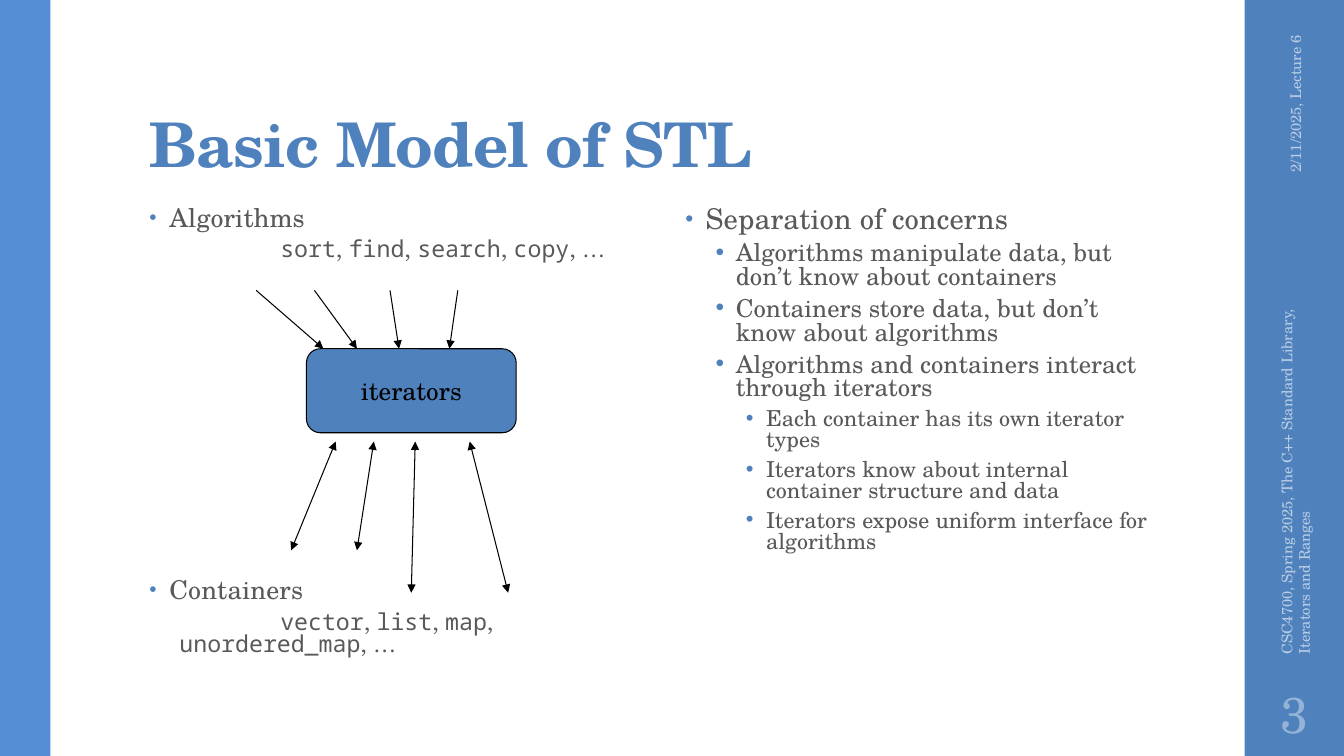
"""Build the slide that explains the basic model of the STL."""
import lxml.etree
import pptx
import pptx.dml.color
import pptx.enum.shapes
import pptx.enum.text
import pptx.oxml.ns
import pptx.util

points = pptx.util.Pt
align = pptx.enum.text.PP_ALIGN
anchor = pptx.enum.text.MSO_ANCHOR
shapes = pptx.enum.shapes.MSO_SHAPE
qualified = pptx.oxml.ns.qn


def colour(value):
    return pptx.dml.color.RGBColor.from_string(value)


def add_element(parent, tag, **attributes):
    return lxml.etree.SubElement(parent, qualified(tag), **attributes)


class SlideBuilder:
    font = "TeX Gyre Schola"
    code_font = "Noto Sans Mono"
    accent = "4F81BD"
    grey = "595959"
    black = "000000"

    def __init__(self, page):
        self.page = page

    def place(self, shape, left, top, width, height):
        shape.left, shape.top = points(left), points(top)
        shape.width, shape.height = points(width), points(height)

    def style(self, span, size, shade, bold=False, spacing=0, font=None):
        span.font.name = font or self.font
        span.font.size = points(size)
        span.font.bold = bold
        span.font.color.rgb = colour(shade)
        if spacing:
            span._r.get_or_add_rPr().set("spc", str(spacing))

    def panel(self, kind, box, fill, line=None):
        shape = self.page.shapes.add_shape(kind, *map(points, box))
        shape.shadow.inherit = False
        shape.fill.solid()
        shape.fill.fore_color.rgb = colour(fill)
        if line:
            shape.line.color.rgb = colour(line)
            shape.line.width = points(0.75)
        else:
            shape.line.fill.background()
        return shape

    def caption(self, shape, text, size, shade, alignment, wrap=True, margin=7.2):
        frame = shape.text_frame
        frame.text = text
        frame.word_wrap = wrap
        frame.vertical_anchor = anchor.MIDDLE
        frame.margin_left = frame.margin_right = points(margin)
        para = frame.paragraphs[0]
        para.alignment = alignment
        self.style(para.runs[0], size, shade)

    def label(self, box, text, size, shade, alignment, rotation=0, margin=7.2):
        shape = self.page.shapes.add_textbox(*map(points, box))
        shape.rotation = rotation
        self.caption(shape, text, size, shade, alignment, margin=margin)

    def title(self, box, text):
        shape = self.page.shapes.title
        self.place(shape, *box)
        frame = shape.text_frame
        frame.text = text
        frame.auto_size = pptx.enum.text.MSO_AUTO_SIZE.NONE
        frame.vertical_anchor = anchor.BOTTOM
        para = frame.paragraphs[0]
        para.alignment = align.LEFT
        para.line_spacing = 0.9
        self.style(para.runs[0], 44, self.accent, bold=True, spacing=-50)

    def listing(self, index, box, sizes, items):
        shape = self.page.placeholders[index]
        self.place(shape, *box)
        frame = shape.text_frame
        frame.auto_size = pptx.enum.text.MSO_AUTO_SIZE.NONE
        for number, (level, text, before) in enumerate(items):
            para = frame.paragraphs[0] if number == 0 else frame.add_paragraph()
            para.level = level
            para.line_spacing = 0.8 if level else 0.85
            para.space_before = points(before)
            para.space_after = points(3 if level else 2)
            for position, part in enumerate(text.split("`")):
                if part:
                    span = para.add_run()
                    span.text = part
                    self.style(span, sizes[level], self.grey,
                               spacing=0 if level else 10,
                               font=self.code_font if position % 2 else None)
            self.indent(para, level, "`" in text)

    def indent(self, para, level, code):
        properties = para._p.get_or_add_pPr()
        left, first = (21.6, 72) if code else (14.4 + 21.6 * level, -14.4)
        properties.set("marL", str(points(left)))
        properties.set("indent", str(points(first)))
        if code:
            add_element(properties, "a:buNone")
            return
        shade = add_element(properties, "a:buClr")
        add_element(shade, "a:srgbClr", val=self.accent)
        add_element(properties, "a:buSzPct", val="100000" if level else "80000")
        add_element(properties, "a:buChar", char="•")

    def arrow(self, start, end, both=False):
        line = self.page.shapes.add_connector(
            pptx.enum.shapes.MSO_CONNECTOR.STRAIGHT, *map(points, start + end))
        line.line.color.rgb = colour(self.black)
        line.line.width = points(0.75)
        stroke = line.line._get_or_add_ln()
        if both:
            add_element(stroke, "a:headEnd", type="triangle")
        add_element(stroke, "a:tailEnd", type="triangle")
        add_element(line._element.spPr, "a:effectLst")


def main():
    deck = pptx.Presentation()
    deck.slide_width, deck.slide_height = points(960), points(540)
    builder = SlideBuilder(deck.slides.add_slide(deck.slide_layouts[3]))

    builder.panel(shapes.RECTANGLE, (889, 0, 72, 540), builder.accent)
    builder.panel(shapes.RECTANGLE, (0, 0, 36, 540), "558ED5")
    builder.title((99.4, 23, 763, 110), "Basic Model of STL")
    builder.listing(1, (99.4, 144, 353, 343), (18.5, 16.6), [
        (0, "Algorithms", 14),
        (1, "`sort`, `find`, `search`, `copy`, …", 3),
        (0, "Containers", 223),
        (1, "`vector`, `list`, `map`, `unordered_map`, …", 3),
    ])
    builder.listing(2, (482.4, 144, 353, 343), (20.4, 17.6, 15.7), [
        (0, "Separation of concerns", 14),
        (1, "Algorithms manipulate data, but don’t know about containers", 3),
        (1, "Containers store data, but don’t know about algorithms", 3),
        (1, "Algorithms and containers interact through iterators", 3),
        (2, "Each container has its own iterator types", 3),
        (2, "Iterators know about internal container structure and data", 3),
        (2, "Iterators expose uniform interface for algorithms", 3),
    ])

    builder.label((850.3, 78.5, 149.8, 28.8), "2/11/2025, Lecture 6",
                  10.5, "B9CDE5", align.RIGHT, rotation=270)
    builder.label((784.1, 319, 282.2, 28.8),
                  "CSC4700, Spring 2025, The C++ Standard Library, Iterators and Ranges",
                  10.5, "B9CDE5", align.LEFT, rotation=270)
    builder.label((889, 486, 72, 46.8), "3", 36, "95B3D7", align.CENTER, margin=3.6)

    iterators = builder.panel(shapes.ROUNDED_RECTANGLE, (218.9, 249.1, 149.8, 60),
                              builder.accent, builder.black)
    builder.caption(iterators, "iterators", 18, builder.black, align.CENTER, wrap=False)
    for start, end in ((183, 231), (224.6, 255), (278.6, 285), (327, 321)):
        builder.arrow((start, 207.4), (end, 249.1))
    for start, bottom, end in ((363, 423.4, 335.5), (293.8, 423.4, 296.6),
                               (255, 393.1, 267), (208, 393.1, 239.8)):
        builder.arrow((start, bottom), (end, 315.4), both=True)

    deck.save("out.pptx")


if __name__ == "__main__":
    main()
